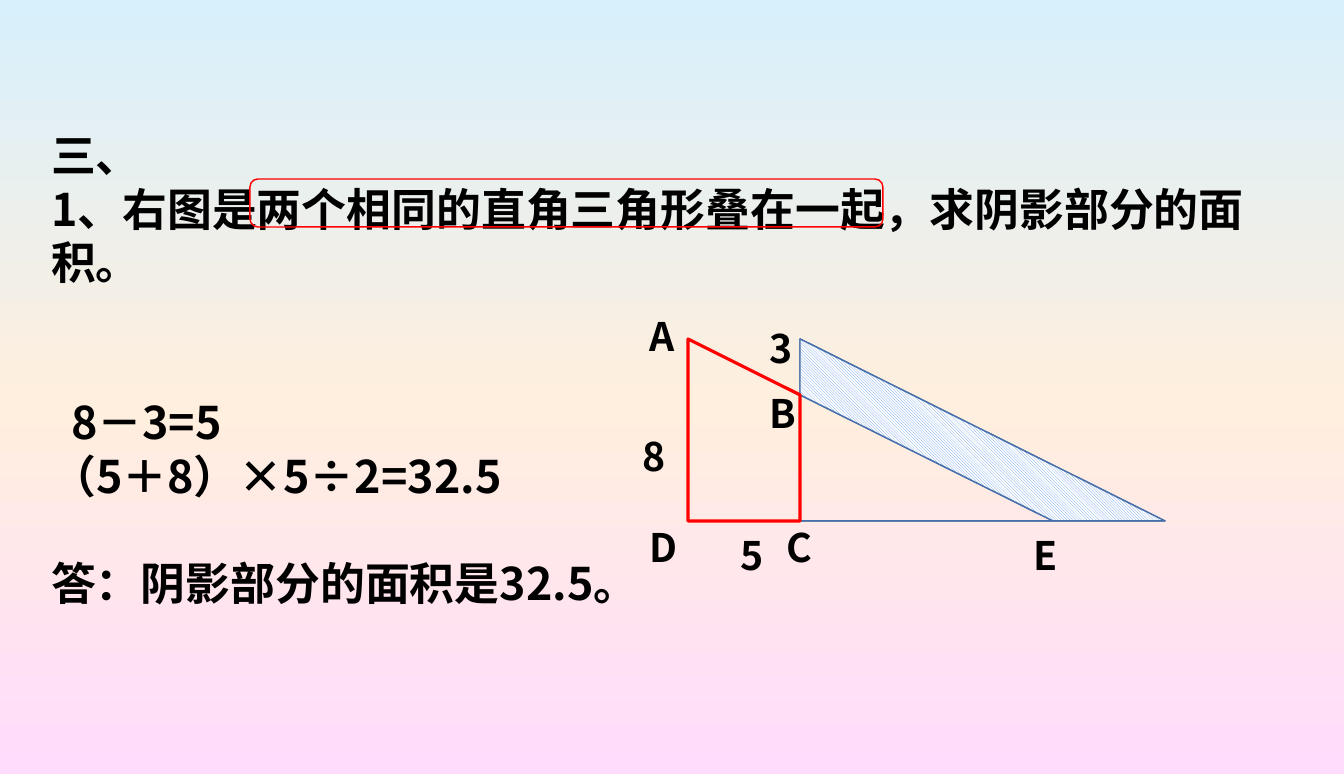
"""Build a geometry exercise slide about two overlapping right triangles."""
from copy import deepcopy

from lxml.etree import SubElement
from pptx import Presentation
from pptx.dml.color import RGBColor
from pptx.enum.dml import MSO_PATTERN
from pptx.enum.shapes import MSO_SHAPE as SHAPE
from pptx.enum.text import MSO_AUTO_SIZE as AUTO_SIZE
from pptx.oxml.ns import qn
from pptx.util import Pt

PX = 914400 / 103.5
FONT = "Noto Sans CJK SC"
BLACK = RGBColor(0x00, 0x00, 0x00)
RED = RGBColor(0xFF, 0x00, 0x00)
BLUE = RGBColor(0x47, 0x6F, 0xAA)
HATCH = RGBColor(0x60, 0x96, 0xE6)
WHITE = RGBColor(0xFF, 0xFF, 0xFF)
SKY = RGBColor(0xD7, 0xF0, 0xFC)
CREAM = RGBColor(0xFF, 0xEF, 0xDE)
PINK = RGBColor(0xFF, 0xDC, 0xFC)


def px(*lengths):
    return [round(length * PX) for length in lengths]


def add_text(box, paragraphs, size, pitch):
    frame = box.text_frame
    frame.word_wrap = True
    frame.auto_size = AUTO_SIZE.NONE
    for index, (text, skipped_lines, indent) in enumerate(paragraphs):
        paragraph = frame.add_paragraph() if index else frame.paragraphs[0]
        paragraph.line_spacing = Pt(pitch)
        if skipped_lines:
            paragraph.space_before = Pt(pitch * skipped_lines)
        if indent:
            paragraph._p.get_or_add_pPr().set("marL", str(px(indent)[0]))
        run = paragraph.add_run()
        run.text = text
        for name, value in {"name": FONT, "size": Pt(size), "bold": True}.items():
            setattr(run.font, name, value)
        run.font.color.rgb = BLACK
        SubElement(run._r.get_or_add_rPr(), qn("a:ea"), typeface=FONT)


presentation = Presentation()
presentation.slide_width, presentation.slide_height = px(1344, 774)
slide = presentation.slides.add_slide(presentation.slide_layouts[6])
shapes = slide.shapes

background = slide.background.fill
background.gradient()
background.gradient_angle = 270
stop_list = next(slide._element.iter(qn("a:gsLst")))
stop_list.append(deepcopy(stop_list[0]))
stop_formats = [(0, SKY), (0.52, CREAM), (1, PINK)]
for stop, (position, color) in zip(background.gradient_stops, stop_formats):
    stop.position = position
    stop.color.rgb = color

exercise = [
    ("三、", 0, 0),
    ("1、右图是两个相同的直角三角形叠在一起，求阴影部分的面积。", 0, 0),
    ("8－3=5", 2, 20),
    ("（5＋8）×5÷2=32.5", 0, 0),
    ("答：阴影部分的面积是32.5。", 1, 0),
]
add_text(shapes.add_textbox(*px(41, 123, 1247, 499)), exercise, 31.2, 37.2)

left, top, width, height, shift, drop = 688, 339, 365, 182, 112, 56
middle, bottom = left + shift, top + height
point_a, point_b = (left, top), (middle, top + drop)
point_c, point_d = (middle, bottom), (left, bottom)
point_e, far_corner = (left + width, bottom), (middle + width, bottom)

highlight = shapes.add_shape(SHAPE.ROUNDED_RECTANGLE, *px(250, 179, 633, 48))
outlined = [(highlight, RED, 1)]
for triangle_left in (left, middle):
    triangle = shapes.add_shape(
        SHAPE.RIGHT_TRIANGLE, *px(triangle_left, top, width, height))
    outlined.append((triangle, BLUE, 1))

outlines = [
    ([(middle, top), far_corner, point_e, point_b], BLUE, 1),
    ([point_d, point_a, point_b, point_c], RED, 2.25),
]
for points, color, weight in outlines:
    builder = shapes.build_freeform(*points[0], scale=PX)
    builder.add_line_segments(points[1:], close=True)
    outlined.append((builder.convert_to_shape(), color, weight))

for shape, color, weight in outlined:
    shape.shadow.inherit = False
    shape.fill.background()
    shape.line.color.rgb = color
    shape.line.width = Pt(weight)

shaded_fill = outlined[3][0].fill
shaded_fill.patterned()
shaded_fill.pattern = MSO_PATTERN.DARK_DOWNWARD_DIAGONAL
shaded_fill.fore_color.rgb = HATCH
shaded_fill.back_color.rgb = WHITE

labels = [
    ("3", 759, 315), ("5", 730, 522), ("8", 632, 423),
    ("A", 639, 303), ("B", 759, 380), ("C", 776, 514),
    ("D", 639, 514), ("E", 1023, 522),
]
for text, label_left, label_top in labels:
    box = shapes.add_textbox(*px(label_left, label_top, 65, 58))
    add_text(box, [(text, 0, 0)], 27.3, 35.5)

presentation.save("out.pptx")
